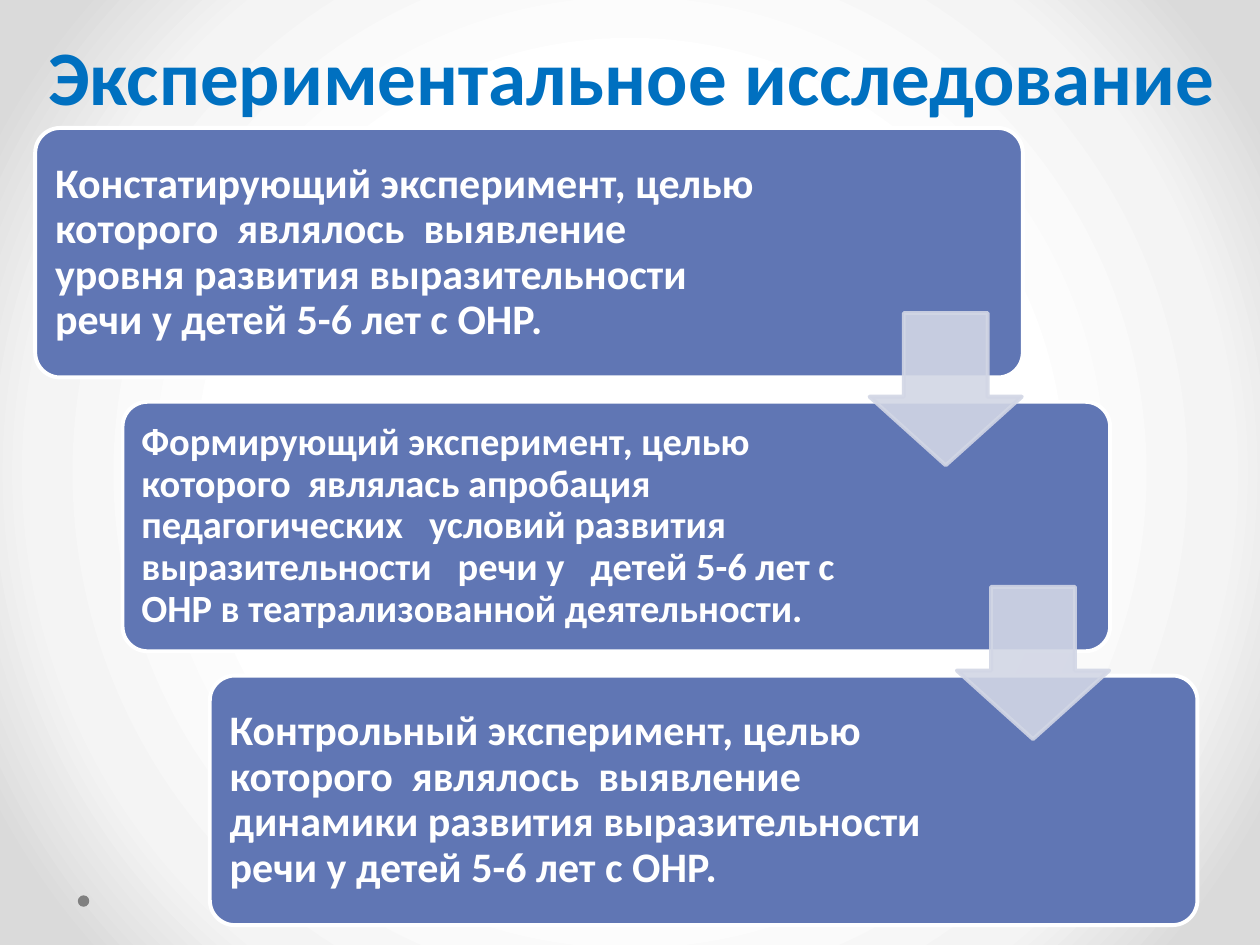
from lxml import etree
from pptx import Presentation
from pptx.dml.color import RGBColor
from pptx.enum.shapes import MSO_SHAPE
from pptx.enum.text import MSO_ANCHOR, PP_ALIGN
from pptx.oxml.ns import qn
from pptx.util import Cm, Pt

ROUNDED = MSO_SHAPE.ROUNDED_RECTANGLE
DOWN_ARROW = MSO_SHAPE.DOWN_ARROW
OVAL = MSO_SHAPE.OVAL
BOTTOM, MIDDLE = MSO_ANCHOR.BOTTOM, MSO_ANCHOR.MIDDLE
LEFT, CENTER = PP_ALIGN.LEFT, PP_ALIGN.CENTER

WHITE = RGBColor(0xFF, 0xFF, 0xFF)
TITLE_BLUE = RGBColor(0x00, 0x70, 0xC0)
PANEL_BLUE = RGBColor(0x60, 0x76, 0xB4)
ARROW_BLUE = RGBColor(0xD2, 0xD6, 0xE5)
GRAY = RGBColor(0x80, 0x80, 0x80)
BACKGROUND_STOPS = [(50, "FFFFFF"), (76, "F4F4F4"), (92, "DADADA")]

FONT = "Calibri"
TITLE = "Экспериментальное исследование"
# text, font size in points, inset in cm
STAGES = [
    ("Констатирующий эксперимент, целью которого  являлось  выявление уровня "
     "развития выразительности речи у детей 5-6 лет с ОНР.", 24, 0.25),
    ("Формирующий эксперимент, целью  которого  являлась апробация "
     "педагогических   условий развития выразительности   речи у   детей "
     "5-6 лет с ОНР в театрализованной деятельности.", 22, 0.23),
    ("Контрольный эксперимент, целью которого  являлось  выявление динамики "
     "развития выразительности речи у детей 5-6 лет с ОНР.", 24, 0.25),
]

PANEL_LEFT, PANEL_TOP = 0.71, 2.58
PANEL_WIDTH, PANEL_HEIGHT = 19.91, 5.03
TEXT_WIDTH, TEXT_MARGIN = 14.78, 0.15
ARROW_LEFT, ARROW_TOP, ARROW_SIZE = 17.53, 6.31, 3.07
STEP_X, STEP_Y = 1.76, 5.52
OPACITY = 90


def set_radial_background(slide):
    fill = slide.background.fill
    fill.gradient()
    gradient = slide.background._cSld.find(".//" + qn("a:gradFill"))
    for child in list(gradient):
        gradient.remove(child)
    stops = etree.SubElement(gradient, qn("a:gsLst"))
    for position, color in BACKGROUND_STOPS:
        stop = etree.SubElement(stops, qn("a:gs"), pos=str(position * 1000))
        etree.SubElement(stop, qn("a:srgbClr"), val=color)
    circle = etree.SubElement(gradient, qn("a:path"), path="circle")
    etree.SubElement(circle, qn("a:fillToRect"),
                     l="50000", t="50000", r="50000", b="50000")


def add_shape(slide, kind, left, top, width, height, color, line_color=None):
    shape = slide.shapes.add_shape(kind, Cm(left), Cm(top), Cm(width), Cm(height))
    shape.shadow.inherit = False
    shape.fill.solid()
    shape.fill.fore_color.rgb = color
    if line_color is None:
        shape.line.fill.background()
    else:
        shape.line.color.rgb = line_color
        shape.line.width = Pt(2.25)
    return shape


def add_text(slide, text, left, top, width, height, size, color,
             inset, anchor, alignment, line_spacing):
    box = slide.shapes.add_textbox(Cm(left), Cm(top), Cm(width), Cm(height))
    frame = box.text_frame
    frame.word_wrap = True
    frame.vertical_anchor = anchor
    frame.margin_left = frame.margin_right = Cm(inset)
    frame.margin_top = frame.margin_bottom = Cm(inset)
    paragraph = frame.paragraphs[0]
    paragraph.text = text
    paragraph.alignment = alignment
    paragraph.line_spacing = line_spacing
    paragraph.font.name = FONT
    paragraph.font.size = Pt(size)
    paragraph.font.bold = True
    paragraph.font.color.rgb = color


def add_stage(slide, index, text, size, inset):
    left = PANEL_LEFT + index * STEP_X
    top = PANEL_TOP + index * STEP_Y
    panel = add_shape(slide, ROUNDED, left, top, PANEL_WIDTH, PANEL_HEIGHT,
                      PANEL_BLUE, WHITE)
    panel.adjustments[0] = 0.1
    add_text(slide, text, left + TEXT_MARGIN, top + TEXT_MARGIN,
             TEXT_WIDTH, PANEL_HEIGHT - 2 * TEXT_MARGIN, size, WHITE,
             inset, MIDDLE, LEFT, 0.9)


def add_arrow(slide, index):
    """Add the translucent arrow from one stage to the next."""
    arrow = add_shape(slide, DOWN_ARROW, ARROW_LEFT + index * STEP_X,
                      ARROW_TOP + index * STEP_Y, ARROW_SIZE, ARROW_SIZE,
                      ARROW_BLUE, ARROW_BLUE)
    arrow.adjustments[0] = 0.55
    arrow.adjustments[1] = 0.45
    for color in arrow._element.spPr.iter(qn("a:srgbClr")):
        etree.SubElement(color, qn("a:alpha"), val=str(OPACITY * 1000))


def main():
    presentation = Presentation()
    presentation.slide_width = Cm(25.4)
    presentation.slide_height = Cm(19.05)
    slide = presentation.slides.add_slide(presentation.slide_layouts[6])
    set_radial_background(slide)
    add_shape(slide, OVAL, 1.57, 18.05, 0.23, 0.23, GRAY)
    add_text(slide, TITLE, 0.05, 0, 25.4, 2.57, 44, TITLE_BLUE,
             0.13, BOTTOM, CENTER, Pt(58))
    for index, (text, size, inset) in enumerate(STAGES):
        add_stage(slide, index, text, size, inset)
    for index in range(len(STAGES) - 1):
        add_arrow(slide, index)
    presentation.save("out.pptx")


if __name__ == "__main__":
    main()
